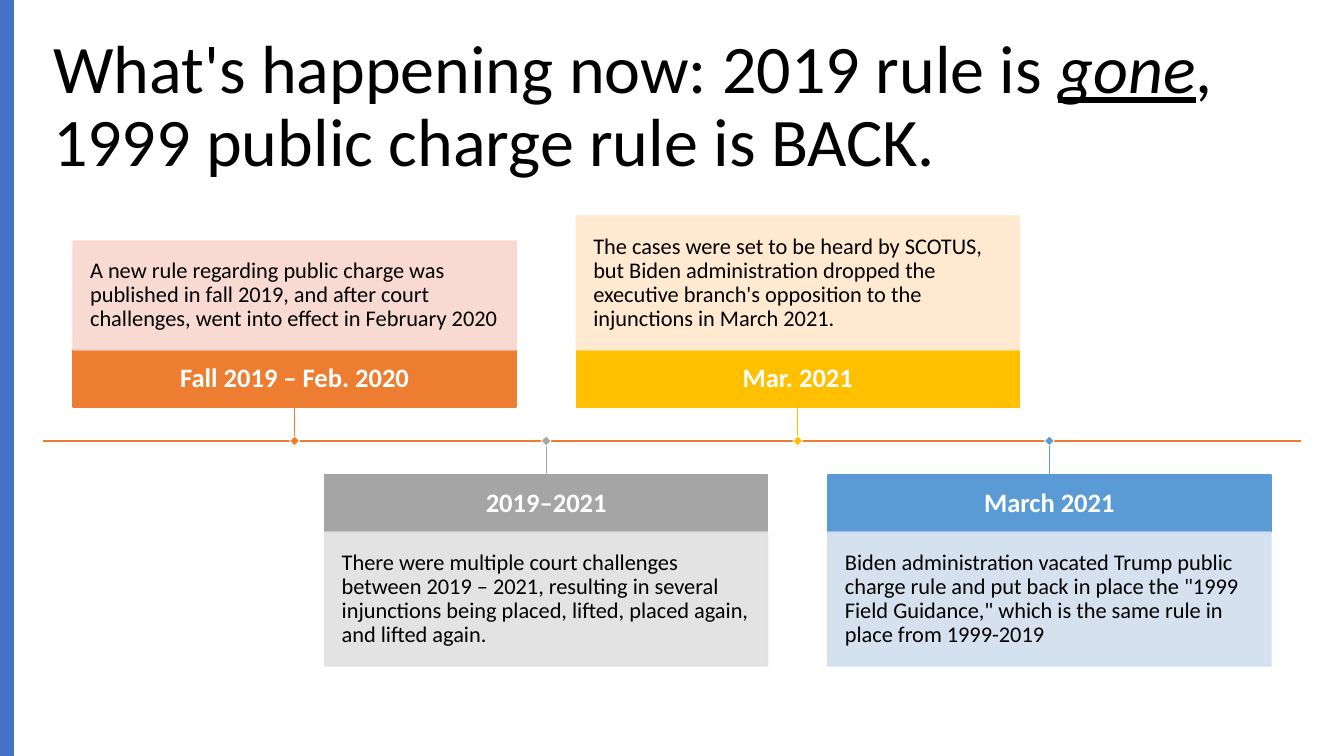
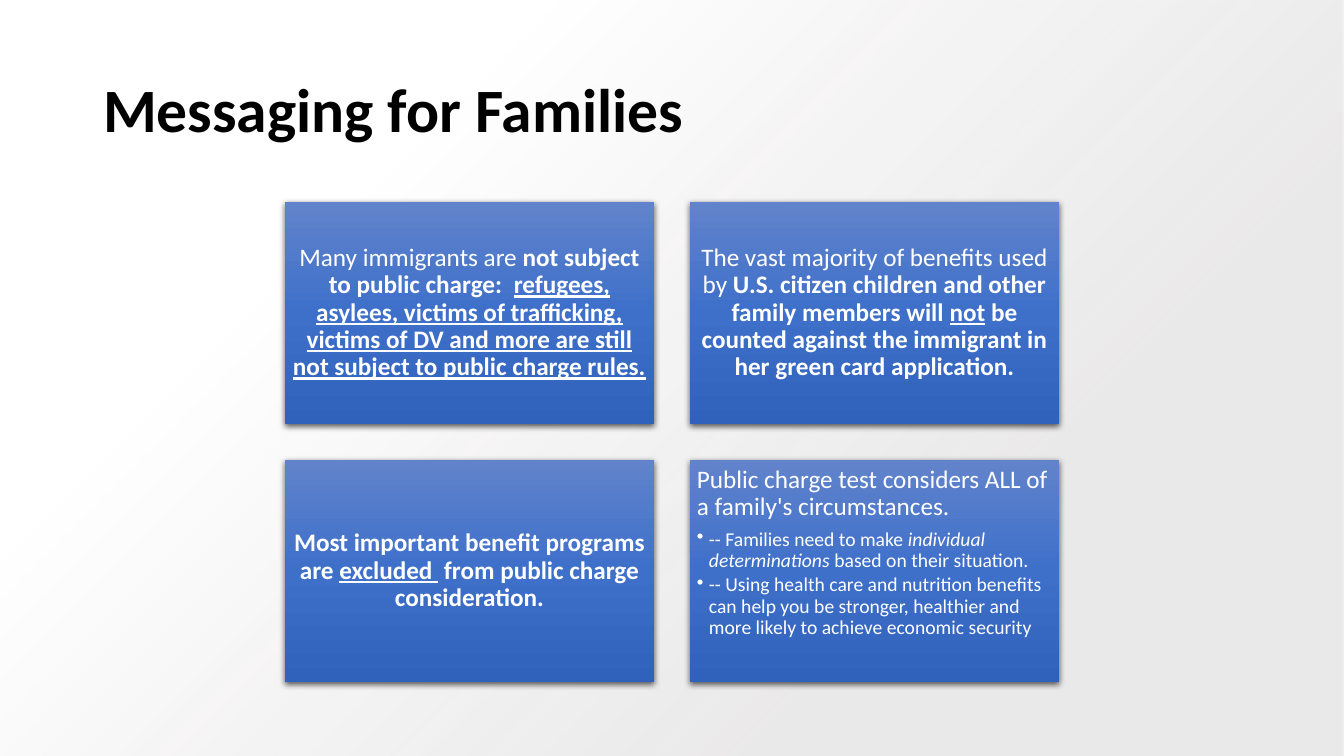
from dataclasses import dataclass

from lxml import etree
from pptx import Presentation
from pptx.dml.color import RGBColor
from pptx.enum.shapes import MSO_CONNECTOR, MSO_SHAPE
from pptx.enum.text import MSO_ANCHOR, MSO_AUTO_SIZE, PP_ALIGN
from pptx.oxml.ns import qn
from pptx.util import Pt

RECT = MSO_SHAPE.RECTANGLE
STRAIGHT = MSO_CONNECTOR.STRAIGHT
LEFT, CENTER = PP_ALIGN.LEFT, PP_ALIGN.CENTER
TOP, MIDDLE = MSO_ANCHOR.TOP, MSO_ANCHOR.MIDDLE
PX = 914400 / 100.8
SLIDE_W, SLIDE_H = 1344, 756


@dataclass(frozen=True)
class Theme:
    font: str = "Calibri"
    ink: str = "000000"
    paper: str = "FFFFFF"
    bar: str = "4472C4"
    axis: str = "ED7D31"
    # Gradient stops: position %, colour, opacity %
    backdrop: tuple = ((28, "E7E6E6", 84), (74, "FFFFFF", 100))
    card: tuple = ((0, "6183CB", 100), (50, "3E70CA", 100), (100, "3062BB", 100))
    headline: float = 48.6
    heading: int = 44
    date: int = 19
    message: int = 18
    event: int = 16
    detail: int = 14
    spacing: float = 0.9


THEME = Theme()

# Content: a run is (text, flags), flags being b, i and u
TIMELINE_TITLE = [("What's happening now: 2019 rule is ", ""), ("gone", "iu"),
                  (",  1999 public charge rule is BACK.", "")]
# Date, colour, tint, height of the description, description
EVENTS = [
    ("Fall 2019 – Feb. 2020", "ED7D31", "F8D7CE", 109,
     "A new rule regarding public charge was published in fall 2019, and after "
     "court challenges, went into effect in February 2020"),
    ("2019–2021", "A5A5A5", "E1E1E1", 134,
     "There were multiple court challenges between 2019 – 2021, resulting in several "
     "injunctions being placed, lifted, placed again, and lifted again."),
    ("Mar. 2021", "FFC000", "FFE8CC", 134,
     "The cases were set to be heard by SCOTUS, but Biden administration dropped the "
     "executive branch's opposition to the injunctions in March 2021."),
    ("March 2021", "5B9BD5", "D2DEEF", 134,
     "Biden administration vacated Trump public charge rule and put back in place the "
     "\"1999 Field Guidance,\" which is the same rule in place from 1999-2019"),
]

FAMILIES_TITLE = [("Messaging for Families", "b")]
# Message runs, then bulleted details
MESSAGES = [
    ([("Many immigrants are ", ""), ("not subject to public charge:  ", "b"),
      ("refugees, asylees, victims of trafficking, victims of DV and more are still "
       "not subject to public charge rules.", "bu")], []),
    ([("The vast majority of benefits used by ", ""),
      ("U.S. citizen children and other family members will ", "b"), ("not", "bu"),
      (" be counted against the immigrant in her green card application.", "b")], []),
    ([("Most important benefit programs are ", "b"), ("excluded ", "bu"),
      (" from public charge consideration.", "b")], []),
    ([("Public charge test considers ALL of a family's circumstances.", "")],
     [[("-- Families need to make ", ""), ("individual determinations ", "i"),
       ("based on their situation.", "")],
      [("-- Using health care and nutrition benefits can help you be stronger, "
        "healthier and more likely to achieve economic security", "")]]),
]


def emu(*lengths):
    return [round(length * PX) for length in lengths]


def add_xml(parent, tag, **attributes):
    return etree.SubElement(parent, qn(tag), attributes)


def set_opacity(color_parent, percent):
    add_xml(color_parent.find(".//" + qn("a:srgbClr")), "a:alpha", val=str(percent * 1000))


def write(shape, runs, size, color=THEME.ink, align=LEFT, anchor=MIDDLE, inset=None,
          after=0, bullet=False, more=False):
    """Write one paragraph of runs; more=True adds it below the text already there."""
    frame = shape.text_frame
    frame.word_wrap, frame.auto_size = True, MSO_AUTO_SIZE.NONE
    frame.vertical_anchor = anchor
    if inset is not None:
        margin, = emu(inset)
        frame.margin_left = frame.margin_right = margin
        frame.margin_top = frame.margin_bottom = margin
    paragraph = frame.add_paragraph() if more else frame.paragraphs[0]
    paragraph.alignment, paragraph.line_spacing = align, THEME.spacing
    paragraph.space_before, paragraph.space_after = Pt(0), Pt(after)
    if bullet:
        paragraph.level = 1
        indent, = emu(12)
        properties = paragraph._p.get_or_add_pPr()
        properties.set("marL", str(indent))
        properties.set("indent", str(-indent))
        add_xml(properties, "a:buChar", char="•")
    for text, flags in runs:
        run = paragraph.add_run()
        run.text = text
        font = run.font
        font.name, font.size = THEME.font, Pt(size)
        font.color.rgb = RGBColor.from_string(color)
        font.bold, font.italic, font.underline = (flag in flags for flag in "biu")


def add_rect(slide, box, fill=None, line=None, width=1, opacity=None):
    rect = slide.shapes.add_shape(RECT, *emu(*box))
    rect.shadow.inherit = False
    if fill:
        rect.fill.solid()
        rect.fill.fore_color.rgb = RGBColor.from_string(fill)
    if line:
        rect.line.color.rgb = RGBColor.from_string(line)
        rect.line.width = Pt(width)
    else:
        rect.line.fill.background()
    if opacity:
        properties = rect._element.spPr
        set_opacity(properties.find(qn("a:solidFill")), opacity)
        set_opacity(properties.find(qn("a:ln")), opacity)
    return rect


def fill_gradient(rect, stops, from_corner=False):
    """Fill top to bottom, or in circles around the lower right corner."""
    rect.fill.gradient()
    gradient = rect._element.spPr.find(qn("a:gradFill"))
    for child in list(gradient):
        gradient.remove(child)
    stop_list = add_xml(gradient, "a:gsLst")
    for position, color, opacity in stops:
        stop = add_xml(stop_list, "a:gs", pos=str(position * 1000))
        add_xml(stop, "a:srgbClr", val=color)
        if opacity < 100:
            set_opacity(stop, opacity)
    if from_corner:
        circle = add_xml(gradient, "a:path", path="circle")
        add_xml(circle, "a:fillToRect", l="100000", t="100000")
    else:
        add_xml(gradient, "a:lin", ang="5400000", scaled="0")


def add_shadow(rect):
    effects = rect._element.spPr.find(qn("a:effectLst"))
    shadow = add_xml(effects, "a:outerShdw", blurRad=str(Pt(4.5)), dist=str(Pt(1.5)),
                     dir="5400000", algn="ctr", rotWithShape="0")
    add_xml(shadow, "a:srgbClr", val="000000")
    set_opacity(shadow, 63)


def add_line(slide, start, end, color, width):
    line = slide.shapes.add_connector(STRAIGHT, *emu(*start, *end))
    line.line.color.rgb = RGBColor.from_string(color)
    line.line.width = Pt(width)
    add_xml(line._element.spPr, "a:effectLst")


def add_titled_slide(deck, runs, box, size):
    slide = deck.slides.add_slide(deck.slide_layouts[5])
    title = slide.shapes.title
    title.left, title.top, title.width, title.height = emu(*box)
    write(title, runs, size)
    return slide


def build_timeline(deck):
    axis_x, axis_y, axis_w = 43, 441, 1258
    card_w, date_h, stem, marker = 443, 57, 34, 7
    slide = add_titled_slide(deck, TIMELINE_TITLE, (axis_x, 35, axis_w, 146), THEME.headline)
    add_rect(slide, (0, 0, 14, SLIDE_H), THEME.bar)
    add_line(slide, (axis_x, axis_y), (axis_x + axis_w, axis_y), THEME.axis, 1)

    # Events alternate above and below the axis
    step = axis_w / (len(EVENTS) + 1)
    for index, (date, color, tint, body_h, body) in enumerate(EVENTS):
        center = axis_x + step * (index + 1)
        left = center - card_w / 2
        if index % 2 == 0:
            stem_end = axis_y - stem
            date_y = stem_end - date_h
            body_y = date_y - body_h
        else:
            stem_end = date_y = axis_y + stem
            body_y = date_y + date_h
        label = add_rect(slide, (left, date_y, card_w, date_h), color, color)
        write(label, [(date, "b")], THEME.date, THEME.paper, CENTER, inset=11)
        description = add_rect(slide, (left, body_y, card_w, body_h), tint, tint, opacity=90)
        write(description, [(body, "")], THEME.event, inset=17)
        add_line(slide, (center, stem_end), (center, axis_y), color, 0.5)
        diamond = add_rect(slide, (center - marker / 2, axis_y - marker / 2, marker, marker),
                           color, THEME.paper, 0.5)
        diamond.rotation = 45


def build_families(deck):
    columns, card_w, card_h, gap, top = 2, 369, 222, 36, 202
    slide = add_titled_slide(deck, FAMILIES_TITLE, (93, 40, 1159, 146), THEME.heading)

    # Backdrop goes behind the title
    backdrop = add_rect(slide, (0, 0, SLIDE_W, SLIDE_H))
    fill_gradient(backdrop, THEME.backdrop, from_corner=True)
    slide.shapes._spTree.insert(2, backdrop._element)

    # Message grid, centred across the slide
    left = (SLIDE_W - columns * card_w - (columns - 1) * gap) / 2
    for index, (message, details) in enumerate(MESSAGES):
        row, column = divmod(index, columns)
        card = add_rect(slide, (left + column * (card_w + gap), top + row * (card_h + gap),
                                card_w, card_h))
        fill_gradient(card, THEME.card)
        add_shadow(card)
        align, anchor = (LEFT, TOP) if details else (CENTER, MIDDLE)
        write(card, message, THEME.message, THEME.paper, align, anchor, inset=7, after=6)
        for detail in details:
            write(card, detail, THEME.detail, THEME.paper, LEFT, anchor, after=2,
                  bullet=True, more=True)


def main():
    deck = Presentation()
    deck.slide_width, deck.slide_height = emu(SLIDE_W, SLIDE_H)
    build_timeline(deck)
    build_families(deck)
    deck.save("out.pptx")


if __name__ == "__main__":
    main()
